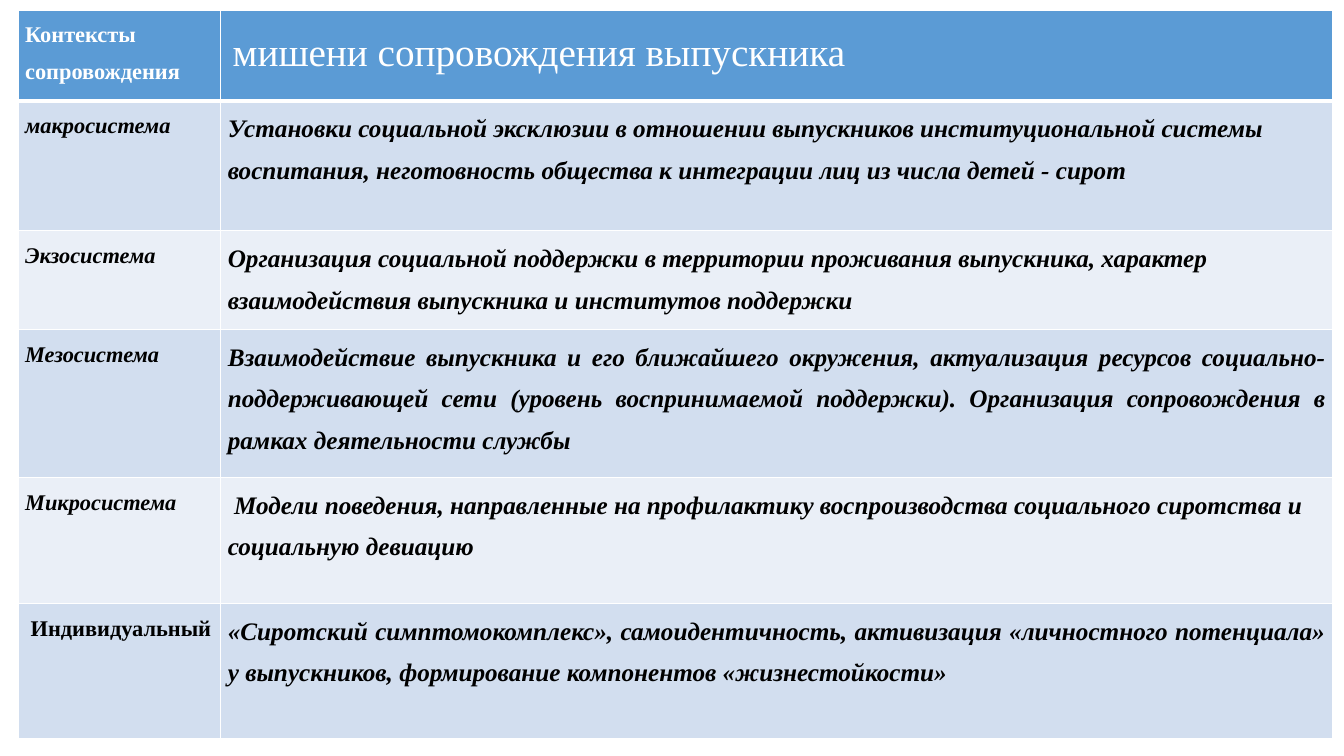
from dataclasses import dataclass

from lxml.etree import SubElement
from pptx import Presentation
from pptx.dml.color import RGBColor as Rgb
from pptx.enum.text import MSO_ANCHOR as Anchor, PP_ALIGN as Align
from pptx.oxml.ns import qn
from pptx.util import Pt

EMU_PER_PX = 9144  # 100 px to the inch


@dataclass(frozen=True)
class Theme:
    font: str = "Times New Roman"
    header_fill: str = "5B9BD5"
    bands: tuple = ("D2DEEF", "EAEFF7")
    header_ink: str = "FFFFFF"
    body_ink: str = "000000"
    border: str = "FFFFFF"
    context_size: int = 16
    target_size: int = 18
    heading_size: int = 28
    spacer_size: int = 14
    line_spacing: float = 1.5
    thin: int = 1
    thick: int = 3


@dataclass(frozen=True)
class Span:
    text: str
    size: int
    color: str
    bold: bool = True
    italic: bool = True


def px(length):
    return length * EMU_PER_PX


class SlideBuilder:
    def __init__(self, theme, width, height):
        self.theme = theme
        self.deck = Presentation()
        self.deck.slide_width, self.deck.slide_height = px(width), px(height)
        self.slide = self.deck.slides.add_slide(self.deck.slide_layouts[6])

    def table(self, left, top, widths, heights):
        frame = self.slide.shapes.add_table(
            len(heights), len(widths), px(left), px(top),
            px(sum(widths)), px(sum(heights)))
        for column, width in zip(frame.table.columns, widths):
            column.width = px(width)
        for row, height in zip(frame.table.rows, heights):
            row.height = px(height)
        return frame.table

    def cell(self, cell, spans, fill, align, bottom):
        cell.margin_left = cell.margin_right = px(7)
        cell.margin_top = cell.margin_bottom = 0
        cell.vertical_anchor = Anchor.TOP
        cell.fill.solid()
        cell.fill.fore_color.rgb = Rgb.from_string(fill)
        paragraph = cell.text_frame.paragraphs[0]
        paragraph.alignment = align
        paragraph.line_spacing = self.theme.line_spacing
        for span in spans:
            self.run(paragraph, span)
        self.borders(cell, bottom)

    def run(self, paragraph, span):
        run = paragraph.add_run()
        run.text = span.text
        font = run.font
        font.name, font.size = self.theme.font, Pt(span.size)
        font.bold, font.italic = span.bold, span.italic
        font.color.rgb = Rgb.from_string(span.color)

    def borders(self, cell, bottom):
        properties = cell._tc.get_or_add_tcPr()
        thin = self.theme.thin
        sides = {"L": thin, "R": thin, "T": thin, "B": bottom}
        # Border lines must come before the fill
        for position, (side, weight) in enumerate(sides.items()):
            line = SubElement(properties, qn(f"a:ln{side}"), w=str(Pt(weight)))
            paint = SubElement(line, qn("a:solidFill"))
            SubElement(paint, qn("a:srgbClr"), val=self.theme.border)
            properties.insert(position, line)

    def save(self):
        self.deck.save("out.pptx")


# Context, targets, alignment of the targets
CONTEXTS = [
    ("макросистема",
     "Установки социальной эксклюзии в отношении выпускников институциональной "
     "системы воспитания, неготовность общества к интеграции лиц из числа детей - сирот",
     Align.LEFT),
    ("Экзосистема",
     "Организация социальной поддержки в территории проживания выпускника, "
     "характер взаимодействия выпускника и институтов поддержки",
     Align.LEFT),
    ("Мезосистема",
     "Взаимодействие выпускника и его ближайшего окружения, актуализация ресурсов "
     "социально-поддерживающей сети (уровень воспринимаемой поддержки). "
     "Организация сопровождения в рамках деятельности службы",
     Align.JUSTIFY),
    ("Микросистема",
     " Модели поведения, направленные на профилактику воспроизводства "
     "социального сиротства и социальную девиацию",
     Align.LEFT),
    (" Индивидуальный",
     "«Сиротский симптомокомплекс», самоидентичность, активизация «личностного "
     "потенциала» у выпускников, формирование компонентов «жизнестойкости»",
     Align.JUSTIFY),
]


def main():
    theme = Theme()
    builder = SlideBuilder(theme, 1333, 750)
    support = builder.table(18, 10, [201, 1103], [90, 129, 98, 147, 125, 134])

    # Header row
    ink = theme.header_ink
    context_heading = [Span("Контексты сопровождения", theme.context_size, ink, italic=False)]
    target_heading = [
        Span(" ", theme.spacer_size, ink, bold=False, italic=False),
        Span("мишени сопровождения выпускника", theme.heading_size, ink,
             bold=False, italic=False),
    ]
    headings = [(context_heading, Align.JUSTIFY), (target_heading, Align.LEFT)]
    for column, (spans, align) in enumerate(headings):
        builder.cell(support.cell(0, column), spans, theme.header_fill, align, theme.thick)

    # Context rows in alternating bands
    for row, (context, targets, align) in enumerate(CONTEXTS, start=1):
        band = theme.bands[(row - 1) % 2]
        is_system = row < len(CONTEXTS)
        context_span = Span(context, theme.context_size, theme.body_ink, italic=is_system)
        target_span = Span(targets, theme.target_size, theme.body_ink)
        builder.cell(support.cell(row, 0), [context_span], band, Align.JUSTIFY, theme.thin)
        builder.cell(support.cell(row, 1), [target_span], band, align, theme.thin)

    builder.save()


if __name__ == "__main__":
    main()
